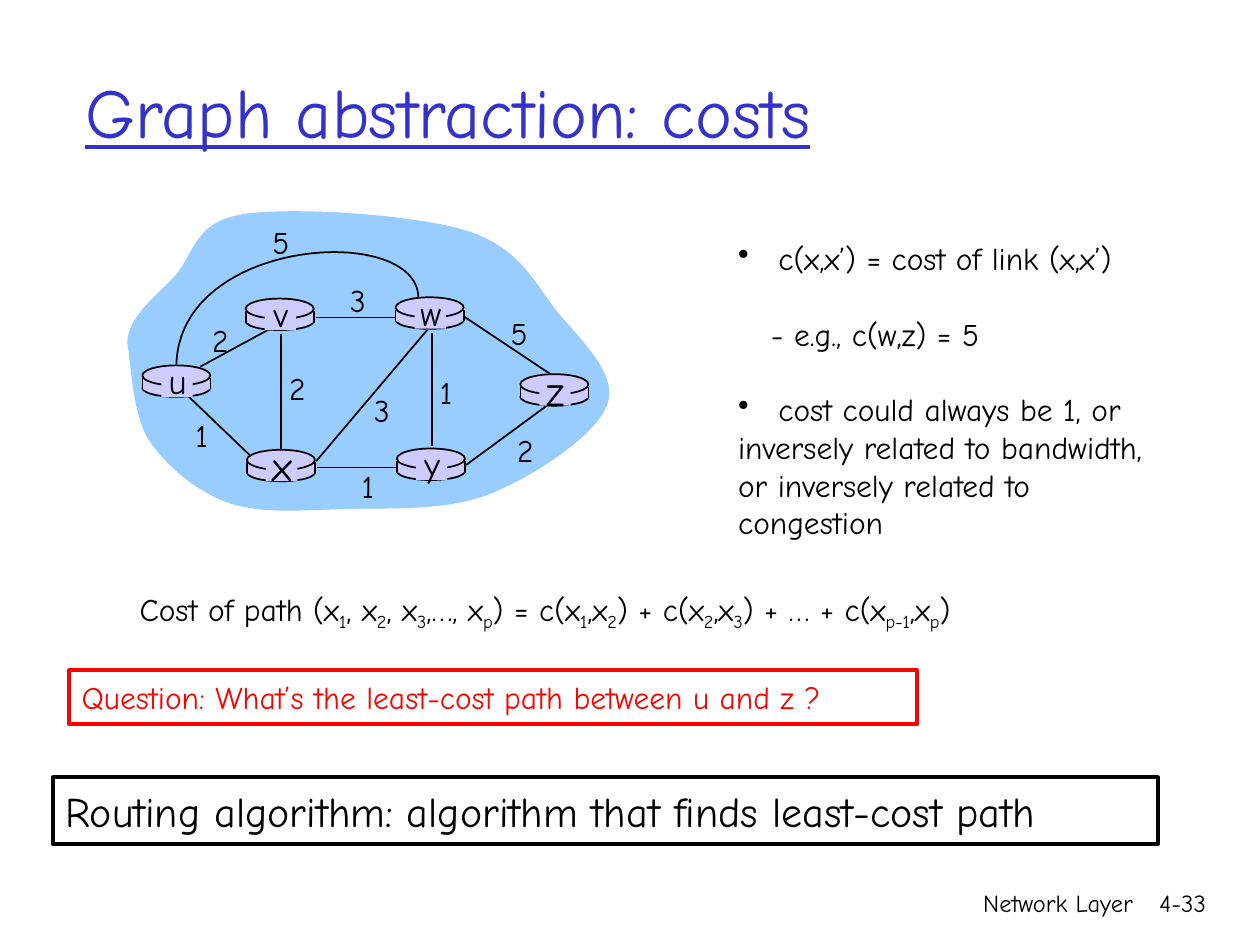
from dataclasses import dataclass

from lxml import etree
from pptx import Presentation
from pptx.dml.color import RGBColor
from pptx.enum.shapes import MSO_CONNECTOR, MSO_SHAPE
from pptx.enum.text import MSO_ANCHOR, PP_ALIGN
from pptx.oxml.ns import qn
from pptx.util import Inches, Pt

LEFT, CENTER, RIGHT = PP_ALIGN.LEFT, PP_ALIGN.CENTER, PP_ALIGN.RIGHT
TOP, MIDDLE = MSO_ANCHOR.TOP, MSO_ANCHOR.MIDDLE
RECTANGLE, OVAL = MSO_SHAPE.RECTANGLE, MSO_SHAPE.OVAL
STRAIGHT = MSO_CONNECTOR.STRAIGHT


@dataclass(frozen=True)
class Theme:
    font: str = "Comic Neue"
    ink: str = "000000"
    title: str = "3333CC"
    question: str = "FF0000"
    cloud: str = "99CCFF"
    router: str = "CCCCFF"
    title_size: int = 40
    large: int = 24
    name: int = 20
    body: int = 18
    footer: int = 14
    thin: float = 1
    thick: float = 2.25


THEME = Theme()

CLOUD = [
    (1.01, 2.72), (1.02, 2.51), (1.23, 2.36), (1.39, 2.19),
    (1.54, 2.02), (1.54, 1.76), (1.93, 1.7), (2.31, 1.64), (3.28, 1.7), (3.7, 1.83),
    (4.12, 1.96), (4.24, 2.24), (4.42, 2.47), (4.61, 2.7), (4.91, 2.97), (4.82, 3.21),
    (4.74, 3.45), (4.24, 3.78), (3.89, 3.92), (3.54, 4.06), (3.08, 4.03), (2.73, 4.04),
    (2.39, 4.05), (2.07, 4.08), (1.81, 3.99), (1.56, 3.9), (1.32, 3.7), (1.18, 3.49),
    (1.05, 3.28), (1.04, 2.88), (1.01, 2.72),
]
LONG_LINK = [(3.32, 2.36), (3.31, 1.77), (1.43, 1.88), (1.4, 2.89)]

LINKS = [
    ((1.59, 2.91), (2.18, 2.59)),
    ((2.23, 2.65), (2.23, 3.58)),
    ((1.98, 3.61), (1.5, 3.15)),
    ((2.51, 3.66), (3.39, 2.62)),
    ((3.16, 3.71), (2.52, 3.71)),
    ((3.43, 2.64), (3.43, 3.54)),
    ((3.7, 3.69), (4.34, 3.22)),
    ((4.37, 2.97), (3.68, 2.51)),
    ((3.15, 2.52), (2.51, 2.52)),
]
COSTS = [
    ("2", 1.75, 2.7), ("2", 2.36, 3.08), ("1", 1.6, 3.45), ("3", 3.03, 3.25),
    ("1", 2.92, 3.86), ("1", 3.54, 3.11), ("2", 4.17, 3.57), ("5", 4.12, 2.64),
    ("3", 2.84, 2.38), ("5", 2.23, 1.92),
]
ROUTERS = [
    ("u", 1.13, 3, THEME.name), ("x", 1.96, 3.67, THEME.large),
    ("v", 1.95, 2.47, THEME.name), ("w", 3.14, 2.46, THEME.name),
    ("y", 3.15, 3.66, THEME.name), ("z", 4.13, 3.07, THEME.large),
]
NOTES = [
    ("c(x,x’) = cost of link (x,x’)", {"bullet": True}),
    ("- e.g., c(w,z) = 5", {"margin": 0.26, "before": 21.5}),
    ("cost could always be 1, or", {"bullet": True, "before": 21.5}),
    ("inversely related to bandwidth,", {}),
    ("or inversely related to", {}),
    ("congestion", {}),
]
PATH_COST = ("Cost of path (x|1|, x|2|, x|3|,…, x|p|) = c(x|1|,x|2|) + "
             "c(x|2|,x|3|) + … + c(x|p-1|,x|p|)")


class SlideBuilder:
    def __init__(self, slide, theme):
        self.slide = slide
        self.shapes = slide.shapes
        self.theme = theme

    def paint(self, shape, fill=None, line=None, width=THEME.thin):
        shape.shadow.inherit = False
        if fill:
            shape.fill.solid()
            shape.fill.fore_color.rgb = RGBColor.from_string(fill)
        else:
            shape.fill.background()
        if line:
            shape.line.color.rgb = RGBColor.from_string(line)
            shape.line.width = Pt(width)
        else:
            shape.line.fill.background()
        return shape

    def shape(self, kind, box, **style):
        return self.paint(self.shapes.add_shape(kind, *map(Inches, box)), **style)

    def line(self, start, end):
        connector = self.shapes.add_connector(STRAIGHT, *map(Inches, (*start, *end)))
        connector.line.color.rgb = RGBColor.from_string(self.theme.ink)
        connector.line.width = Pt(self.theme.thin)
        etree.SubElement(connector._element.spPr, qn("a:effectLst"))

    def curve(self, points, closed=False, **style):
        corners = [(Inches(x), Inches(y)) for x, y in points]
        builder = self.shapes.build_freeform(*corners[0])
        builder.add_line_segments(corners[1:], close=closed)
        shape = self.paint(builder.convert_to_shape(), **style)
        outline = shape._element.find(".//" + qn("a:path"))
        segments = outline.findall(qn("a:lnTo"))
        for first in range(0, len(segments), 3):
            bezier = etree.Element(qn("a:cubicBezTo"))
            segments[first].addprevious(bezier)
            for segment in segments[first:first + 3]:
                bezier.append(segment[0])
                outline.remove(segment)

    def fill_text(self, shape, lines, size, color=THEME.ink, align=LEFT, anchor=TOP,
                  underline=None):
        frame = shape.text_frame
        for name, value in {"word_wrap": True, "vertical_anchor": anchor}.items():
            setattr(frame, name, value)
        font_format = {"name": self.theme.font, "size": Pt(size), "underline": underline}
        for index, (text, layout) in enumerate(lines):
            paragraph = frame.add_paragraph() if index else frame.paragraphs[0]
            paragraph.alignment = align
            self.lay_out(paragraph, **layout)
            for position, piece in enumerate(text.split("|")):
                run = paragraph.add_run()
                run.text = piece
                for name, value in font_format.items():
                    setattr(run.font, name, value)
                run.font.color.rgb = RGBColor.from_string(color)
                if position % 2:
                    run._r.get_or_add_rPr().set("baseline", "-25000")

    def lay_out(self, paragraph, margin=0, before=0, bullet=False):
        paragraph.space_before = Pt(before)
        properties = paragraph._p.get_or_add_pPr()
        hanging = 0.32 if bullet else 0
        properties.set("marL", str(Inches(margin + hanging)))
        properties.set("indent", str(-Inches(hanging)))
        if bullet:
            etree.SubElement(properties, qn("a:buChar")).set("char", "•")

    def text(self, box, lines, size, **style):
        if isinstance(lines, str):
            lines = [(lines, {})]
        self.fill_text(self.shapes.add_textbox(*map(Inches, box)), lines, size, **style)

    def label(self, text, x, y, size):
        self.text((x - 0.2, y - 0.2, 0.4, 0.4), text, size, align=CENTER, anchor=MIDDLE)

    def framed_text(self, box, text, size, color):
        shape = self.shape(RECTANGLE, box, line=color, width=self.theme.thick)
        self.fill_text(shape, [(text, {})], size, color=color, anchor=MIDDLE)

    def router(self, name, x, y, size):
        fill, ink, width = self.theme.router, self.theme.ink, 0.54
        self.shape(OVAL, (x, y + 0.01, width, 0.14), fill=fill, line=ink)
        self.shape(RECTANGLE, (x, y, width, 0.09), fill=fill)
        for side in (x, x + width):
            self.line((side, y), (side, y + 0.09))
        self.shape(OVAL, (x, y - 0.1, width, 0.16), fill=fill, line=ink)
        self.shape(RECTANGLE, (x + 0.15, y - 0.08, 0.25, 0.23), fill=fill)
        self.label(name, x + 0.28, y + 0.02, size)


def main():
    presentation = Presentation()
    presentation.slide_width, presentation.slide_height = Inches(10), Inches(7.5)
    slide = presentation.slides.add_slide(presentation.slide_layouts[6])
    builder = SlideBuilder(slide, THEME)

    builder.text((5.92, 7, 3.17, 0.5), "Network Layer", THEME.footer, align=RIGHT)
    builder.text((8.93, 7, 0.74, 0.5), "4-33", THEME.footer, align=RIGHT)
    builder.text((0.58, 0.25, 8.5, 1.25), "Graph abstraction: costs", THEME.title_size,
                 color=THEME.title, anchor=MIDDLE, underline=True)

    builder.curve(CLOUD, closed=True, fill=THEME.cloud)
    for start, end in LINKS:
        builder.line(start, end)
    builder.curve(LONG_LINK, line=THEME.ink)
    for router in ROUTERS:
        builder.router(*router)
    for cost, x, y in COSTS:
        builder.label(cost, x, y, THEME.body)

    builder.text((5.76, 1.85, 3.84, 2.5), NOTES, THEME.body)
    builder.text((1.01, 4.63, 7.68, 0.4), PATH_COST, THEME.body)
    builder.framed_text((0.55, 5.32, 6.73, 0.43),
                        "Question: What’s the least-cost path between u and z ?",
                        THEME.body, THEME.question)
    builder.framed_text((0.42, 6.17, 8.77, 0.53),
                        "Routing algorithm: algorithm that finds least-cost path",
                        THEME.large, THEME.ink)
    presentation.save("out.pptx")


if __name__ == "__main__":
    main()
